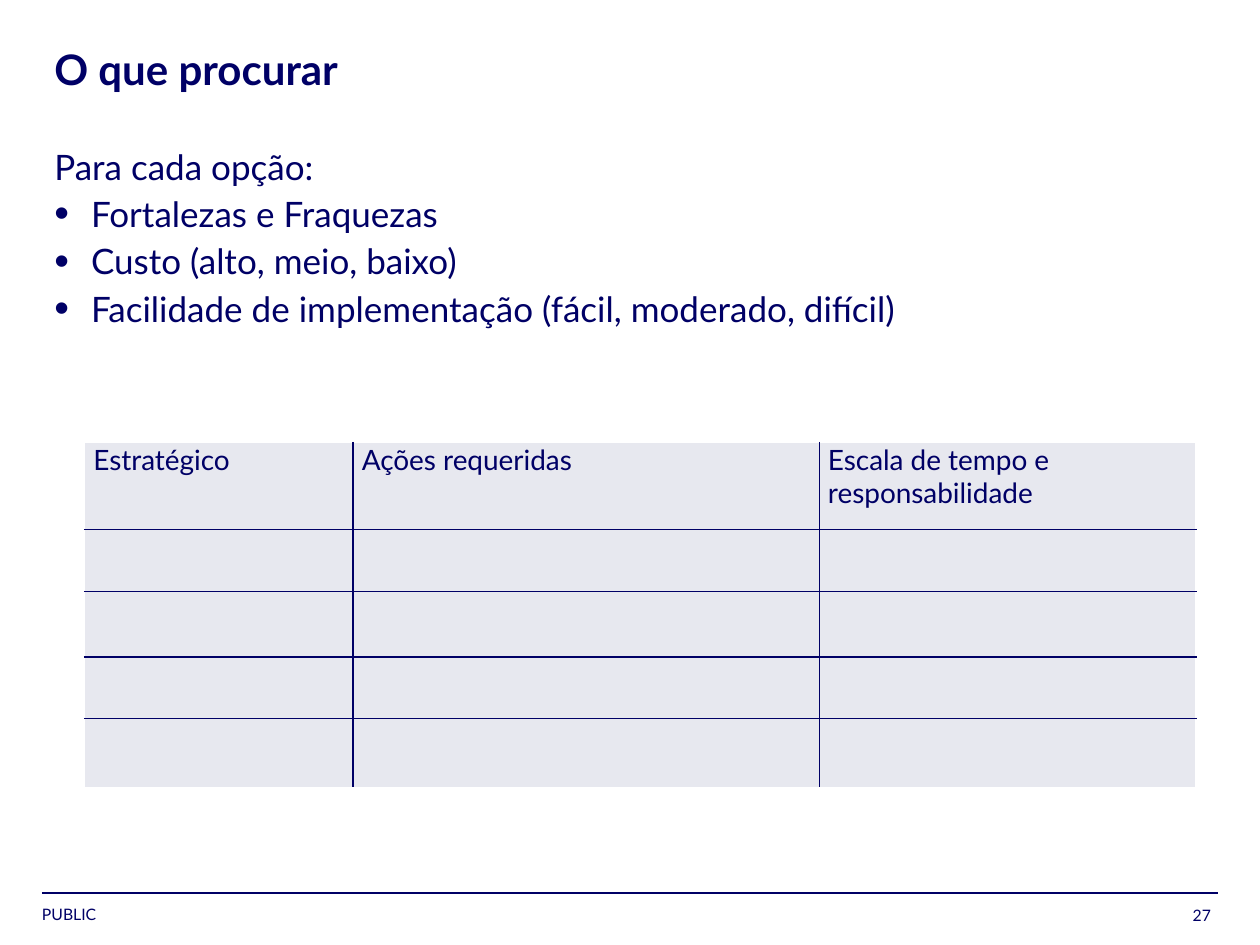
"""Build the slide on what to look for in each option."""
from lxml.etree import SubElement
from pptx import Presentation
from pptx.dml.color import RGBColor
from pptx.enum.shapes import MSO_CONNECTOR
from pptx.enum.text import MSO_ANCHOR, MSO_AUTO_SIZE, PP_ALIGN
from pptx.oxml.ns import qn
from pptx.util import Pt

NAVY = RGBColor(0x00, 0x00, 0x66)
WHITE = RGBColor(0xFF, 0xFF, 0xFF)
PALE = RGBColor(0xE7, 0xE8, 0xEF)
FONT = "Lato"

TITLE = "O que procurar"
LEAD = "Para cada opção:"
POINTS = [
    "Fortalezas e Fraquezas",
    "Custo (alto, meio, baixo)",
    "Facilidade de implementação (fácil, moderado, difícil)",
]
HEADS = ["Estratégico", "Ações requeridas", "Escala de tempo e responsabilidade"]
COLS = [153.4, 266.4, 215.2]
ROWS = [49.7, 35.3, 37.4, 35.3, 39.6]
LABEL = "PUBLIC"
PAGE = "27"


def write(para, text, size, bold=False, align=PP_ALIGN.LEFT, after=0, line=None):
    para.text = text
    para.alignment = align
    para.space_before = Pt(0)
    para.space_after = Pt(after)
    para.line_spacing = line
    font = para.runs[0].font
    font.name = FONT
    font.size = Pt(size)
    font.bold = bold
    font.color.rgb = NAVY


def place(shape, left, top, width, height, anchor=MSO_ANCHOR.TOP, wrap=True):
    shape.left, shape.top = Pt(left), Pt(top)
    shape.width, shape.height = Pt(width), Pt(height)
    frame = shape.text_frame
    frame.margin_left = frame.margin_right = Pt(0)
    frame.margin_top = frame.margin_bottom = Pt(0)
    frame.vertical_anchor = anchor
    frame.word_wrap = wrap
    frame.auto_size = MSO_AUTO_SIZE.NONE
    return frame


def mark(para, char=None):
    props = para._p.get_or_add_pPr()
    indent = Pt(21) if char else 0
    props.set("marL", str(indent))
    props.set("indent", str(-indent))
    if not char:
        SubElement(props, qn("a:buNone"))
        return
    color = SubElement(props, qn("a:buClr"))
    SubElement(color, qn("a:srgbClr"), val=str(NAVY))
    SubElement(props, qn("a:buSzPct"), val="120000")
    SubElement(props, qn("a:buFont"), typeface="Arial")
    SubElement(props, qn("a:buChar"), char=char)


def edge(cell, sides):
    props = cell._tc.get_or_add_tcPr()
    for side, color in sides.items():
        line = SubElement(props, qn("a:ln" + side), w=str(Pt(1)))
        fill = SubElement(line, qn("a:solidFill"))
        SubElement(fill, qn("a:srgbClr"), val=str(color))


def add_grid(slide):
    last_row, last_col = len(ROWS) - 1, len(COLS) - 1
    grid = slide.shapes.add_table(
        len(ROWS), len(COLS), Pt(48.4), Pt(253), Pt(sum(COLS)), Pt(sum(ROWS))
    ).table
    for col, width in zip(grid.columns, COLS):
        col.width = Pt(width)
    for row, height in zip(grid.rows, ROWS):
        row.height = Pt(height)
    for r in range(len(ROWS)):
        for c in range(len(COLS)):
            cell = grid.cell(r, c)
            edge(cell, {
                "L": NAVY if c else WHITE,
                "R": NAVY if c < last_col else WHITE,
                "T": NAVY if r else WHITE,
                "B": NAVY if r < last_row else WHITE,
            })
            cell.fill.solid()
            cell.fill.fore_color.rgb = PALE
    for c, head in enumerate(HEADS):
        cell = grid.cell(0, c)
        cell.margin_left = cell.margin_right = Pt(5)
        cell.margin_top = cell.margin_bottom = Pt(0)
        write(cell.text_frame.paragraphs[0], head, 16)


def add_foot(slide):
    rule = slide.shapes.add_connector(
        MSO_CONNECTOR.STRAIGHT, Pt(24), Pt(510.5), Pt(696), Pt(510.5)
    )
    rule.line.color.rgb = NAVY
    rule.line.width = Pt(1)
    SubElement(rule._element.spPr, qn("a:effectLst"))
    box = slide.shapes.add_textbox(0, 0, 0, 0)
    frame = place(box, 24, 517, 92, 11, wrap=False)
    write(frame.paragraphs[0], LABEL, 9)
    box = slide.shapes.add_textbox(0, 0, 0, 0)
    frame = place(box, 655, 517, 37, 11.5, anchor=MSO_ANCHOR.BOTTOM)
    write(frame.paragraphs[0], PAGE, 9, align=PP_ALIGN.RIGHT)


def main():
    deck = Presentation()
    deck.slide_width, deck.slide_height = Pt(720), Pt(540)
    slide = deck.slides.add_slide(deck.slide_layouts[1])
    frame = place(slide.shapes.title, 31, 28, 527, 79)
    write(frame.paragraphs[0], TITLE, 24, bold=True, line=0.9)
    frame = place(slide.placeholders[1], 31, 83, 618, 318)
    lead = frame.paragraphs[0]
    mark(lead)
    write(lead, LEAD, 20, after=3)
    for point in POINTS:
        para = frame.add_paragraph()
        mark(para, "•")
        write(para, point, 20, after=3)
    add_grid(slide)
    add_foot(slide)
    deck.save("out.pptx")


if __name__ == "__main__":
    main()
